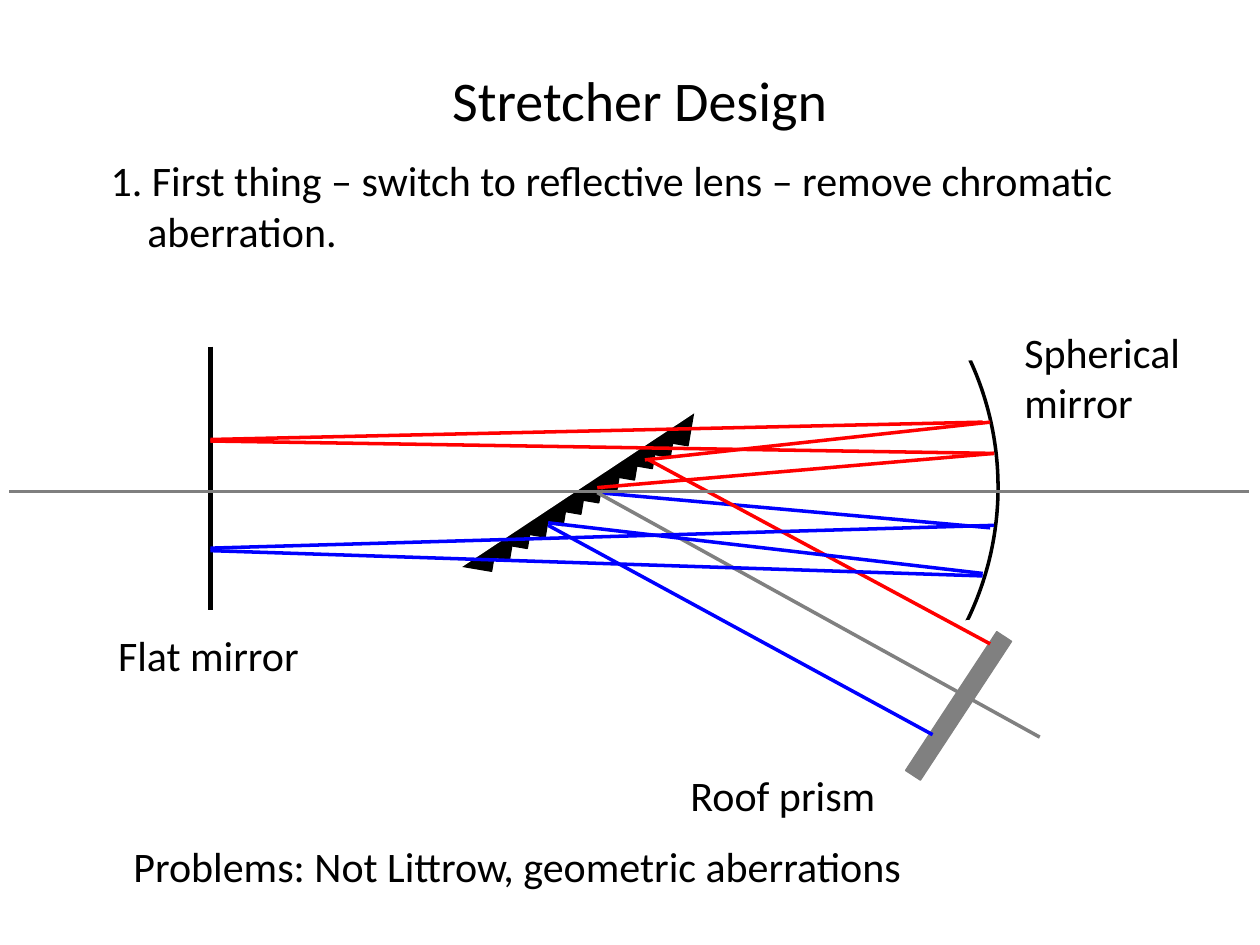
from lxml import etree
from pptx import Presentation
from pptx import util as u
from pptx.dml.color import RGBColor
from pptx.enum import shapes, text
from pptx.oxml.ns import qn

COLORS = {"black": "000000", "white": "FFFFFF", "red": "FF0000", "blue": "0000FF",
          "gray": "808080", "axis": "7F7F7F"}
FONT = "Calibri"

TITLE = ("Stretcher Design", 8.81, 1.19, 8.18, 1.63)
POINT = ("1. First thing – switch to reflective lens – remove chromatic aberration.",
         1.98, 3, 21.23, 2.31, True)
LABELS = [
    ("Flat mirror", 2.13, 12.57, 4.22, 1.27, False),
    ("Roof prism", 13.67, 15.39, 4.29, 1.27, False),
    ("Spherical mirror", 20.4, 6.45, 5.38, 2.31, True),
    ("Problems: Not Littrow, geometric aberrations", 2.44, 16.81, 16.28, 1.27, False),
]

MIRROR_X = 4.24
GRATING_CENTER = (12.04, 9.93)
BEHIND_GRATING = [
    ("black", 3, (MIRROR_X, 6.99), (MIRROR_X, 12.29)),
    ("blue", 2, (19.96, 10.64), GRATING_CENTER),
]
BEHIND_PRISM = [("gray", 2, (20.96, 14.86), GRATING_CENTER)]
FRONT_RAYS = [
    ("blue", 2, (18.8, 14.81), (11.05, 10.59)),
    ("red", 2, (19.96, 12.98), (13.08, 9.27)),
    ("axis", 2, (25.17, 9.91), (0.18, 9.91)),
    ("red", 2, (20.04, 9.14), (MIRROR_X, 8.89)),
    ("red", 2, (19.81, 8.51), (MIRROR_X, 8.86)),
    ("blue", 2, (20.04, 10.59), (MIRROR_X, 11.05)),
    ("blue", 2, (19.81, 11.61), (MIRROR_X, 11.1)),
    ("blue", 2, (19.81, 11.56), (11.05, 10.54)),
    ("red", 2, (20.04, 9.14), (12.04, 9.83)),
    ("red", 2, (19.96, 8.51), (13, 9.27)),
]

RECT = shapes.MSO_SHAPE.RECTANGLE
TEETH = 12
TOOTH_START, TOOTH_STEP, TOOTH_SIZE = (8.89, 10.31), (0.36, -0.23), (1.04, 1.19)
GRATING_BACK = (RECT, "white", 7.7, 9.4, 7.19, 0.64, 326.5)
ARC = (7.92, 3.73, 12.19, 12.24, 39.9)
ARC_TRIMS = [(RECT, "white", 16.59, 4.72, 3.91, 2.62, 354.8),
             (RECT, "white", 16.66, 12.6, 3.91, 2.62, 354.8)]
PRISM = (RECT, "gray", 17.65, 14.05, 3.35, 0.36, 303.3)


def rgb(name):
    return RGBColor.from_string(COLORS[name])


def write(sp, content, size, wrap, align=text.PP_ALIGN.LEFT):
    tf = sp.text_frame
    tf.word_wrap = wrap
    tf.auto_size = text.MSO_AUTO_SIZE.NONE
    tf.vertical_anchor = text.MSO_ANCHOR.TOP
    tf.text = content
    p = tf.paragraphs[0]
    p.alignment = align
    p.font.name, p.font.size = FONT, u.Pt(size)
    p.font.color.rgb = rgb("black")
    return p


def add_label(s, content, left, top, width, height, wrap):
    sp = s.shapes.add_textbox(u.Cm(left), u.Cm(top), u.Cm(width), u.Cm(height))
    return write(sp, content, 24, wrap)


def add_solid(s, kind, color, left, top, width, height, rotation):
    sp = s.shapes.add_shape(kind, u.Cm(left), u.Cm(top), u.Cm(width), u.Cm(height))
    sp.rotation = rotation
    sp.shadow.inherit = False
    sp.fill.solid()
    sp.fill.fore_color.rgb = sp.line.color.rgb = rgb(color)
    sp.line.width = u.Pt(0.75)
    return sp


def add_lines(s, lines):
    for color, weight, start, end in lines:
        line = s.shapes.add_connector(shapes.MSO_CONNECTOR.STRAIGHT,
                                      *(u.Cm(v) for v in start + end))
        line.line.color.rgb = rgb(color)
        line.line.width = u.Pt(weight)
        etree.SubElement(line._element.spPr, qn("a:effectLst"))


def add_grating(s):
    for i in range(TEETH):
        left, top = (a + i * d for a, d in zip(TOOTH_START, TOOTH_STEP))
        add_solid(s, shapes.MSO_SHAPE.RIGHT_TRIANGLE, "black", left, top, *TOOTH_SIZE, 279.6)
    add_solid(s, *GRATING_BACK)


def add_spherical_mirror(s):
    arc = add_solid(s, shapes.MSO_SHAPE.ARC, "black", *ARC)
    arc.fill.background()
    arc.line.width = u.Pt(2)
    for trim in ARC_TRIMS:
        add_solid(s, *trim)


def main():
    """Build the stretcher design slide."""
    prs = Presentation()
    prs.slide_width, prs.slide_height = u.Cm(25.4), u.Cm(19.05)
    s = prs.slides.add_slide(prs.slide_layouts[5])

    title = s.shapes.title
    title.left, title.top, title.width, title.height = (u.Cm(v) for v in TITLE[1:])
    write(title, TITLE[0], 32, False, text.PP_ALIGN.CENTER)
    p_pr = add_label(s, *POINT)._p.get_or_add_pPr()
    p_pr.set("marL", str(u.Cm(0.74)))
    p_pr.set("indent", str(-u.Cm(0.74)))

    add_lines(s, BEHIND_GRATING)
    add_grating(s)
    add_spherical_mirror(s)
    add_lines(s, BEHIND_PRISM)
    add_solid(s, *PRISM)
    add_lines(s, FRONT_RAYS)
    for label in LABELS:
        add_label(s, *label)
    prs.save("out.pptx")


if __name__ == "__main__":
    main()
